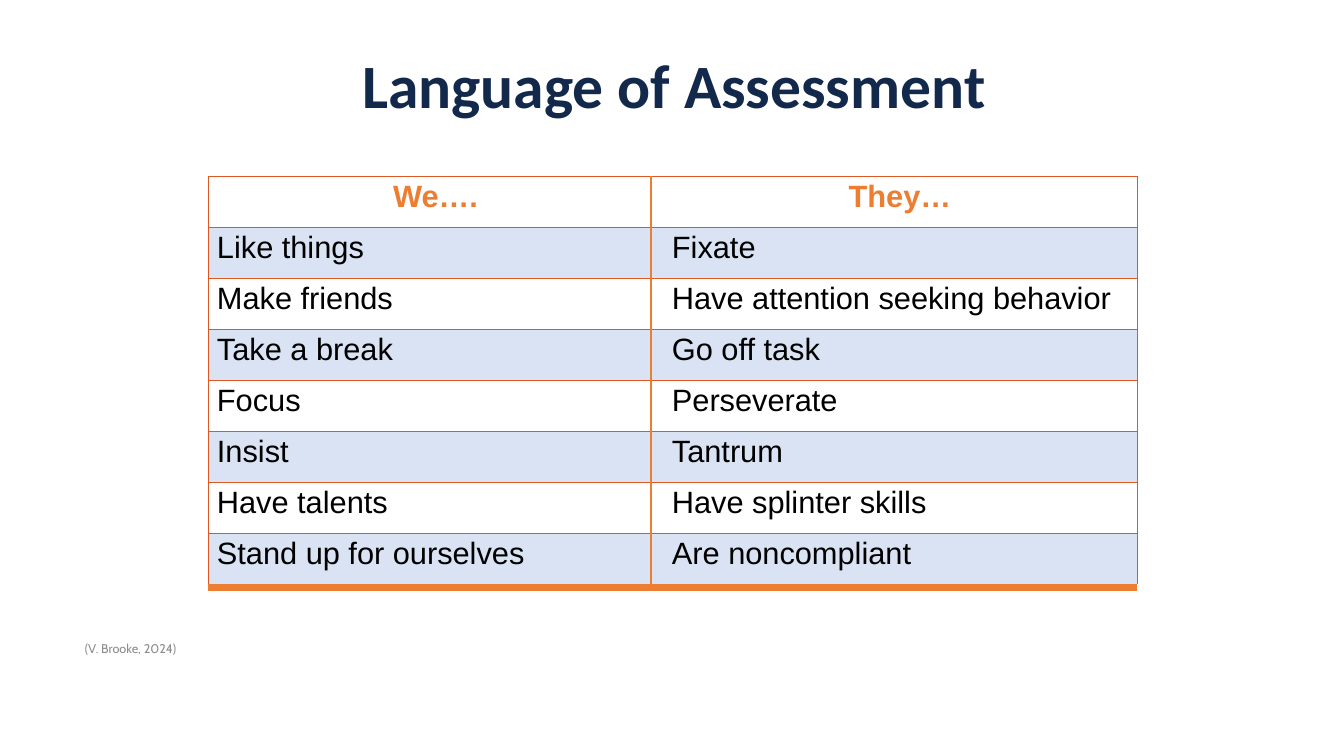
from lxml.etree import SubElement
from pptx import Presentation
from pptx.dml.color import RGBColor
from pptx.enum.shapes import MSO_CONNECTOR
from pptx.enum.text import MSO_ANCHOR, PP_ALIGN
from pptx.oxml import parse_xml
from pptx.oxml.ns import nsdecls, qn
from pptx.util import Emu, Pt

SLIDE_W, SLIDE_H = 1344, 756
ORANGE, BORDER, BAND, WHITE = "ED7D31", "DC5924", "DAE3F3", "FFFFFF"
TABLE_X, TABLE_Y, ROW_H = 208, 176, 51
COL_WIDTHS = [455, 474]
ROWS = [
    ("We….", "They…"),
    ("Like things", "Fixate"),
    ("Make friends", "Have attention seeking behavior"),
    ("Take a break", "Go off task"),
    ("Focus", "Perseverate"),
    ("Insist", "Tantrum"),
    ("Have talents", "Have splinter skills"),
    ("Stand up for ourselves", "Are noncompliant"),
]
TITLE = {"name": "Calibri", "size": Pt(44), "bold": True}
HEADER = {"name": "Arial", "size": Pt(22), "bold": True}
BODY = {"name": "Arial", "size": Pt(22), "bold": False}
CITATION = {"name": "Cabin", "size": Pt(9), "bold": False}


def px(n):
    """Turn slide pixels into EMU."""
    return Emu(round(n * 12192000 / SLIDE_W))


def rgb(color):
    """Turn a hex string into a colour."""
    return RGBColor.from_string(color)


def write(tf, text, fmt, color, align=PP_ALIGN.LEFT):
    """Write one formatted paragraph and return it."""
    p = tf.paragraphs[0]
    p.alignment = align
    r = p.add_run()
    r.text = text
    for key, value in fmt.items():
        setattr(r.font, key, value)
    r.font.color.rgb = rgb(color)
    return p


def add_title(slide, text):
    """Place and fill the title placeholder."""
    sp = slide.shapes.title
    sp.left, sp.top, sp.width, sp.height = map(px, (97, 33, 1155, 111))
    sp.text_frame.vertical_anchor = MSO_ANCHOR.MIDDLE
    p = write(sp.text_frame, text, TITLE, "13294B", PP_ALIGN.CENTER)
    p.line_spacing = 0.9


def set_borders(cell, outer):
    """Outline a cell except on its inner vertical side."""
    tcPr = cell._tc.get_or_add_tcPr()
    for i, side in enumerate(("lnL", "lnR", "lnT", "lnB")):
        ln = parse_xml(f'<a:{side} {nsdecls("a")} w="{Pt(0.67)}"/>')
        if side in (outer, "lnT", "lnB"):
            fill = SubElement(ln, qn("a:solidFill"))
            SubElement(fill, qn("a:srgbClr"), val=BORDER)
        else:
            SubElement(ln, qn("a:noFill"))
        tcPr.insert(i, ln)


def format_cell(cell, text, row, col):
    """Fill, outline and write one table cell."""
    cell.margin_left = cell.margin_right = px(9)
    cell.margin_top = cell.margin_bottom = px(4)
    cell.fill.solid()
    cell.fill.fore_color.rgb = rgb(BAND if row % 2 else WHITE)
    set_borders(cell, ("lnL", "lnR")[col])
    if row == 0:
        write(cell.text_frame, text, HEADER, ORANGE, PP_ALIGN.CENTER)
    else:
        write(cell.text_frame, text, BODY, "000000")


def add_comparison(slide):
    """Add the table that compares the two ways of speaking."""
    size = sum(COL_WIDTHS), ROW_H * len(ROWS)
    table = slide.shapes.add_table(
        len(ROWS), len(COL_WIDTHS), *map(px, (TABLE_X, TABLE_Y, *size))).table
    table.first_row = table.horz_banding = False
    for column, width in zip(table.columns, COL_WIDTHS):
        column.width = px(width)
    for i, texts in enumerate(ROWS):
        table.rows[i].height = px(ROW_H)
        for j, text in enumerate(texts):
            format_cell(table.cell(i, j), text, i, j)


def add_line(slide, x1, y1, x2, y2, width):
    """Add a straight orange line."""
    line = slide.shapes.add_connector(
        MSO_CONNECTOR.STRAIGHT, *map(px, (x1, y1, x2, y2)))
    line.line.color.rgb = rgb(ORANGE)
    line.line.width = Pt(width)
    SubElement(line._element.spPr, qn("a:effectLst"))


def add_citation(slide, text):
    """Add the small source note under the table."""
    sp = slide.shapes.add_textbox(*map(px, (75, 636, 695, 40)))
    sp.text_frame.word_wrap = True
    write(sp.text_frame, text, CITATION, "8C8C8C")


def main():
    """Build the slide and save it."""
    prs = Presentation()
    prs.slide_width, prs.slide_height = px(SLIDE_W), px(SLIDE_H)
    slide = prs.slides.add_slide(prs.slide_layouts[5])
    add_title(slide, "Language of Assessment")
    add_comparison(slide)
    right, bottom = TABLE_X + sum(COL_WIDTHS), TABLE_Y + ROW_H * len(ROWS)
    add_line(slide, 651, TABLE_Y, 651, bottom, 2)
    add_line(slide, TABLE_X, bottom + 4, right, bottom + 4, 5)
    add_citation(slide, "(V. Brooke, 2024)")
    prs.save("out.pptx")


if __name__ == "__main__":
    main()
